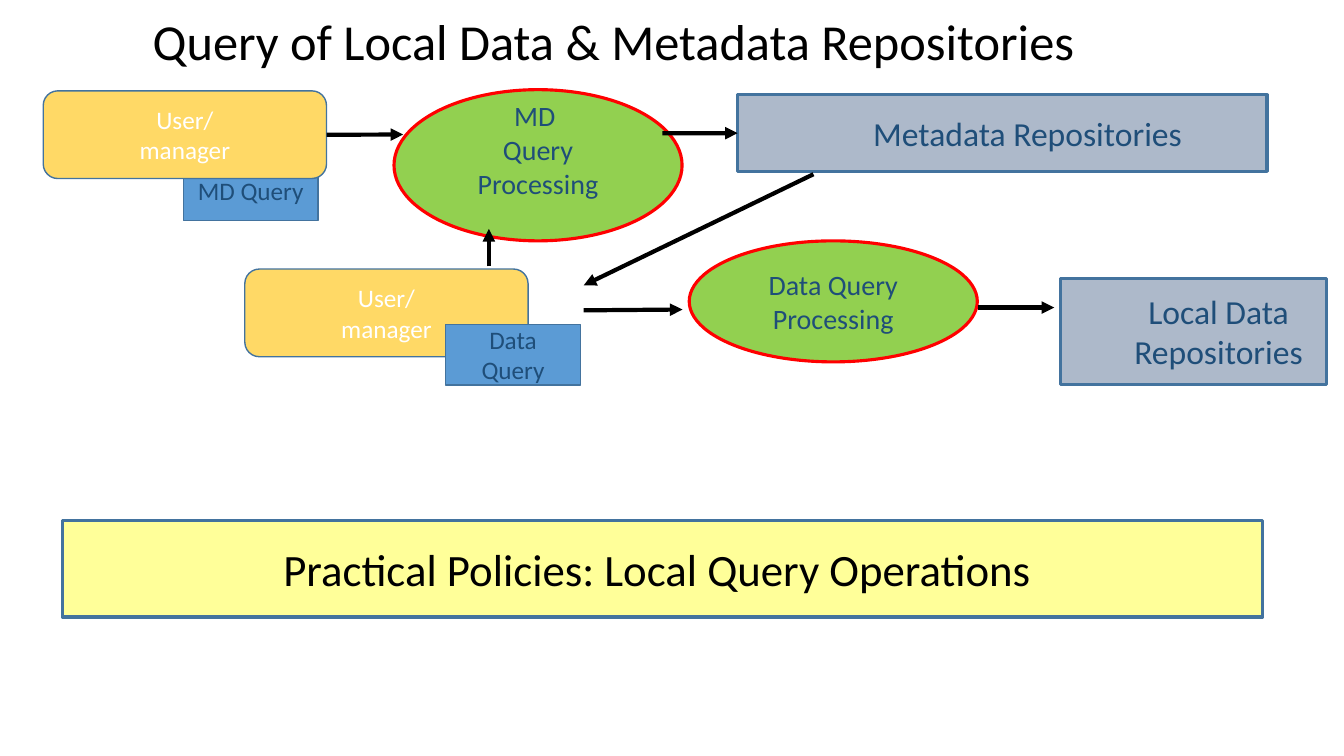
from lxml.etree import SubElement
from pptx import Presentation
from pptx.dml.color import RGBColor
from pptx.enum.shapes import MSO_CONNECTOR, MSO_SHAPE
from pptx.enum.text import MSO_ANCHOR, MSO_AUTO_SIZE, PP_ALIGN
from pptx.oxml.ns import qn
from pptx.util import Cm, Pt

BLACK = RGBColor(0x00, 0x00, 0x00)
WHITE = RGBColor(0xFF, 0xFF, 0xFF)
NAVY = RGBColor(0x1F, 0x4E, 0x79)
OUTLINE = RGBColor(0x43, 0x73, 0x9E)
RED = RGBColor(0xFF, 0x00, 0x00)
GREEN = RGBColor(0x92, 0xD0, 0x50)
GREY = RGBColor(0xAD, 0xB9, 0xCA)
BLUE = RGBColor(0x5B, 0x9B, 0xD5)
GOLD = RGBColor(0xFF, 0xD9, 0x66)
YELLOW = RGBColor(0xFF, 0xFF, 0x99)

FONT = "Calibri"
INDENT = Cm(1.27)
FRAME = {"word_wrap": True, "auto_size": MSO_AUTO_SIZE.NONE,
         "vertical_anchor": MSO_ANCHOR.MIDDLE}


def set_attributes(target, values):
    for name, value in values.items():
        setattr(target, name, value)


def write_text(frame, text, size, colour, **paragraph_format):
    """Fill a text frame, one centred paragraph per line of text."""
    set_attributes(frame, FRAME)
    frame.text = text
    for paragraph in frame.paragraphs:
        set_attributes(paragraph, {"alignment": PP_ALIGN.CENTER, **paragraph_format})
        set_attributes(paragraph.runs[0].font, {"name": FONT, "size": Pt(size)})
        paragraph.runs[0].font.color.rgb = colour


def add_title(slide, text):
    title = slide.shapes.title
    set_attributes(title, {"left": Cm(0.86), "top": Cm(0.1),
                           "width": Cm(29.21), "height": Cm(2.01)})
    write_text(title.text_frame, text, 36, BLACK, line_spacing=0.9)


def add_node(slide, kind, position, size, text, fill, font_size, font_colour,
             outline=OUTLINE, outline_width=2.25):
    node = slide.shapes.add_shape(kind, *map(Cm, position + size))
    node.shadow.inherit = False
    node.fill.solid()
    node.fill.fore_color.rgb = fill
    node.line.color.rgb = outline
    node.line.width = Pt(outline_width)
    write_text(node.text_frame, text, font_size, font_colour)
    return node


def add_user(slide, position):
    return add_node(slide, MSO_SHAPE.ROUNDED_RECTANGLE, position, (7.14, 2.21),
                    "User/\nmanager", GOLD, 18, WHITE, outline_width=1)


def add_query(slide, position, text):
    return add_node(slide, MSO_SHAPE.RECTANGLE, position, (3.4, 1.52),
                    text, BLUE, 18, NAVY, outline_width=1)


def add_processing(slide, position, height, text):
    return add_node(slide, MSO_SHAPE.OVAL, position, (7.26, height),
                    text, GREEN, 20, NAVY, outline=RED)


def add_repository(slide, position, size, text):
    repository = add_node(slide, MSO_SHAPE.RECTANGLE, position, size, text, GREY, 24, NAVY)
    paragraph = repository.text_frame.paragraphs[0]
    paragraph.level = 1
    properties = paragraph._p.get_or_add_pPr()
    properties.set("marL", str(INDENT))
    properties.set("indent", "0")
    return repository


def add_arrow(slide, start, end):
    arrow = slide.shapes.add_connector(MSO_CONNECTOR.STRAIGHT, *map(Cm, start + end))
    arrow.line.color.rgb = BLACK
    arrow.line.width = Pt(3)
    SubElement(arrow.line._get_or_add_ln(), qn("a:tailEnd"), type="triangle")
    SubElement(arrow._element.spPr, qn("a:effectLst"))
    return arrow


def main():
    presentation = Presentation()
    presentation.slide_width = Cm(33.87)
    presentation.slide_height = Cm(19.05)
    slide = presentation.slides.add_slide(presentation.slide_layouts[5])

    add_title(slide, "Query of Local Data & Metadata Repositories")
    metadata = add_repository(slide, (18.59, 2.39), (13.34, 1.93), "Metadata Repositories")
    add_node(slide, MSO_SHAPE.RECTANGLE, (1.57, 13.11), (30.25, 2.44),
             "Practical Policies: Local Query Operations ", YELLOW, 32, BLACK)
    add_repository(slide, (26.72, 7.01), (6.71, 2.67), "Local Data Repositories")

    add_processing(slide, (17.37, 6.07), 3.05, "Data Query Processing")
    md_processing = add_processing(slide, (9.93, 2.26), 3.81, "MD \nQuery Processing")
    set_attributes(md_processing.text_frame, {"margin_top": 0, "margin_bottom": Cm(0.8)})

    add_query(slide, (4.62, 4.04), "MD Query")
    user = add_user(slide, (1.09, 2.29))
    add_user(slide, (6.17, 6.78))
    add_query(slide, (11.23, 8.18), "Data Query")

    user_to_md = add_arrow(slide, (8.23, 3.39), (10.16, 3.39))
    user_to_md.begin_connect(user, 3)
    md_to_metadata = add_arrow(slide, (16.69, 3.36), (18.59, 3.36))
    md_to_metadata.end_connect(metadata, 1)
    for start, end in [
        ((20.5, 4.39), (14.71, 7.19)),
        ((12.32, 6.71), (12.32, 5.77)),
        ((14.71, 7.82), (17.2, 7.8)),
        ((24.64, 7.75), (26.57, 7.75)),
    ]:
        add_arrow(slide, start, end)

    presentation.save("out.pptx")


if __name__ == "__main__":
    main()
